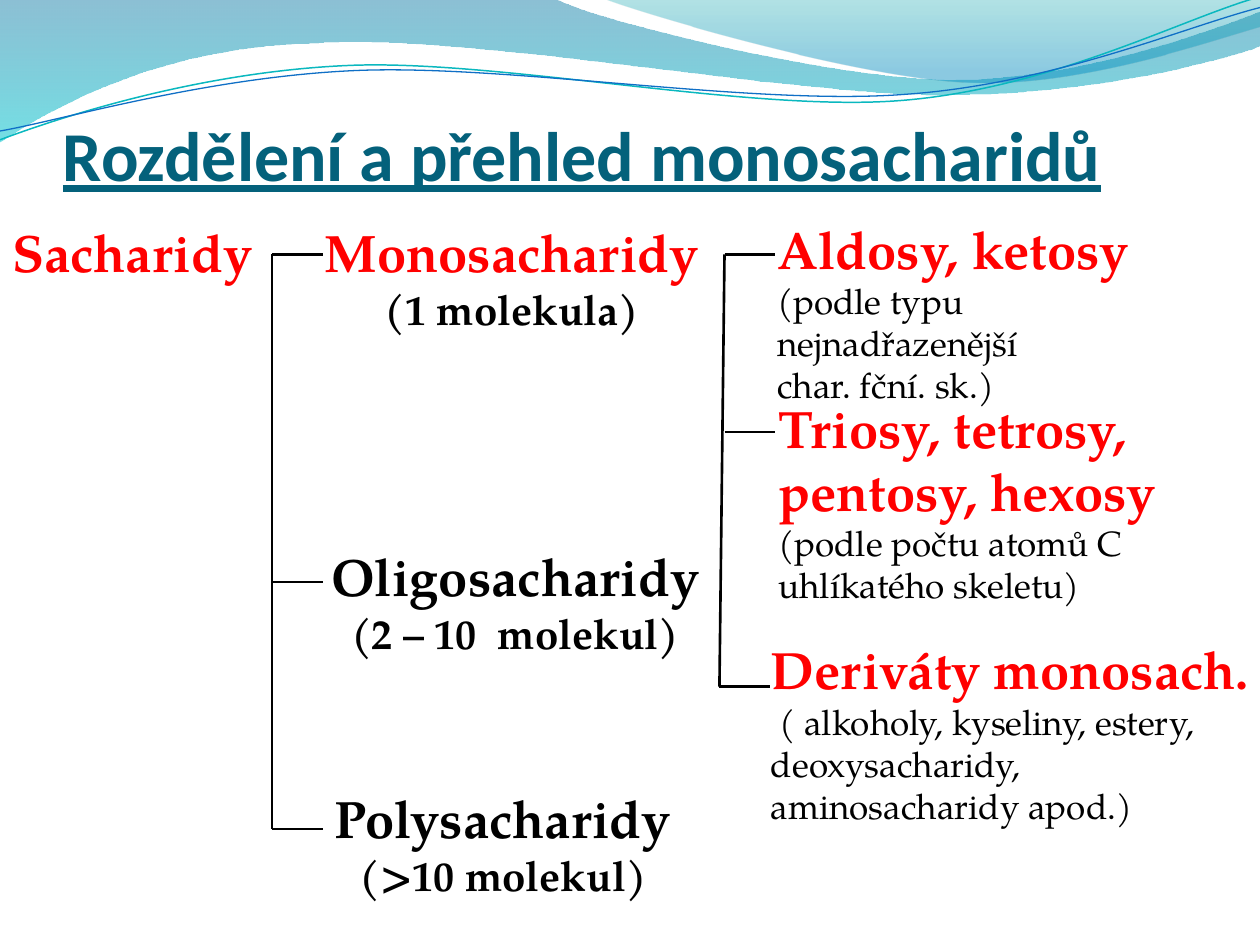
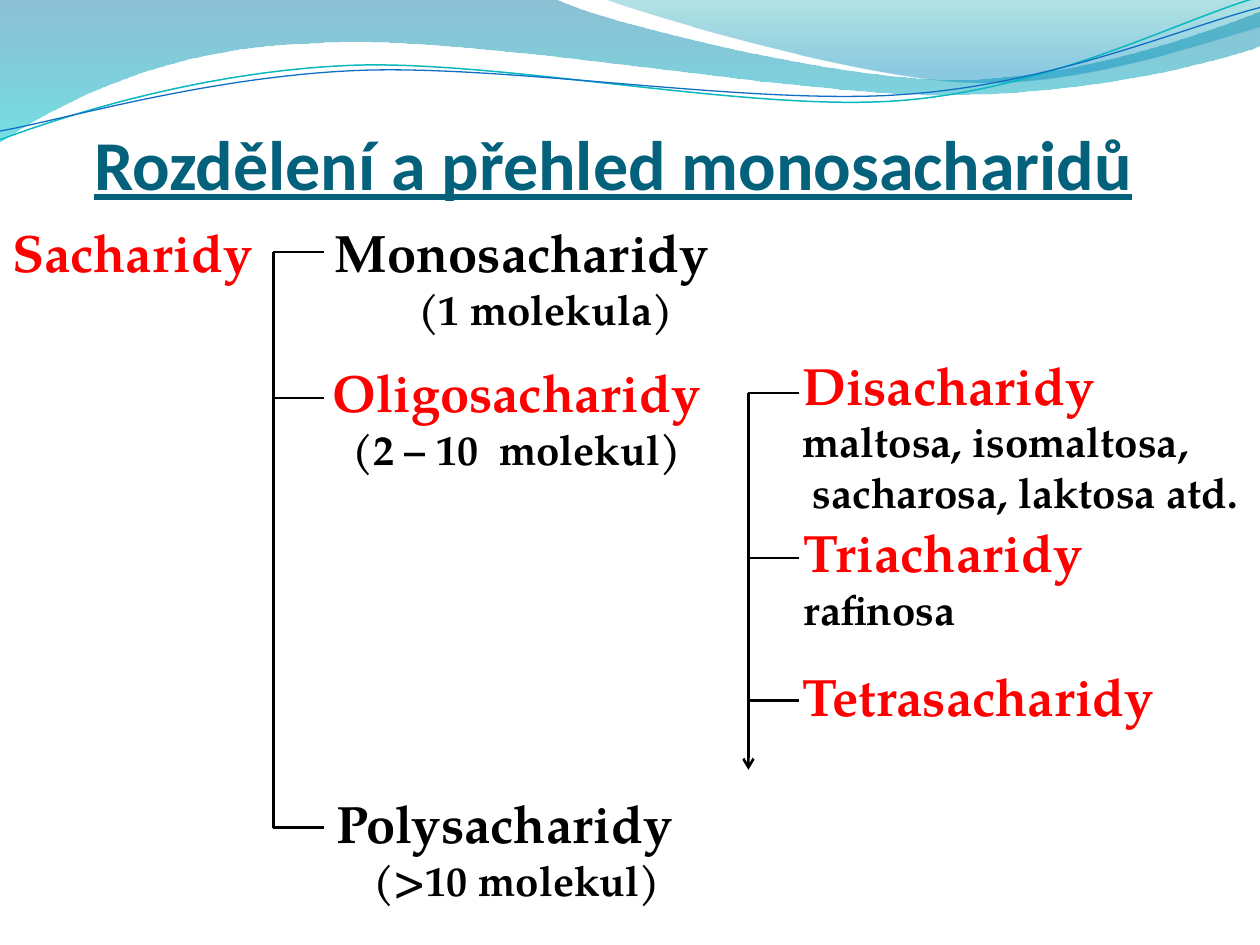
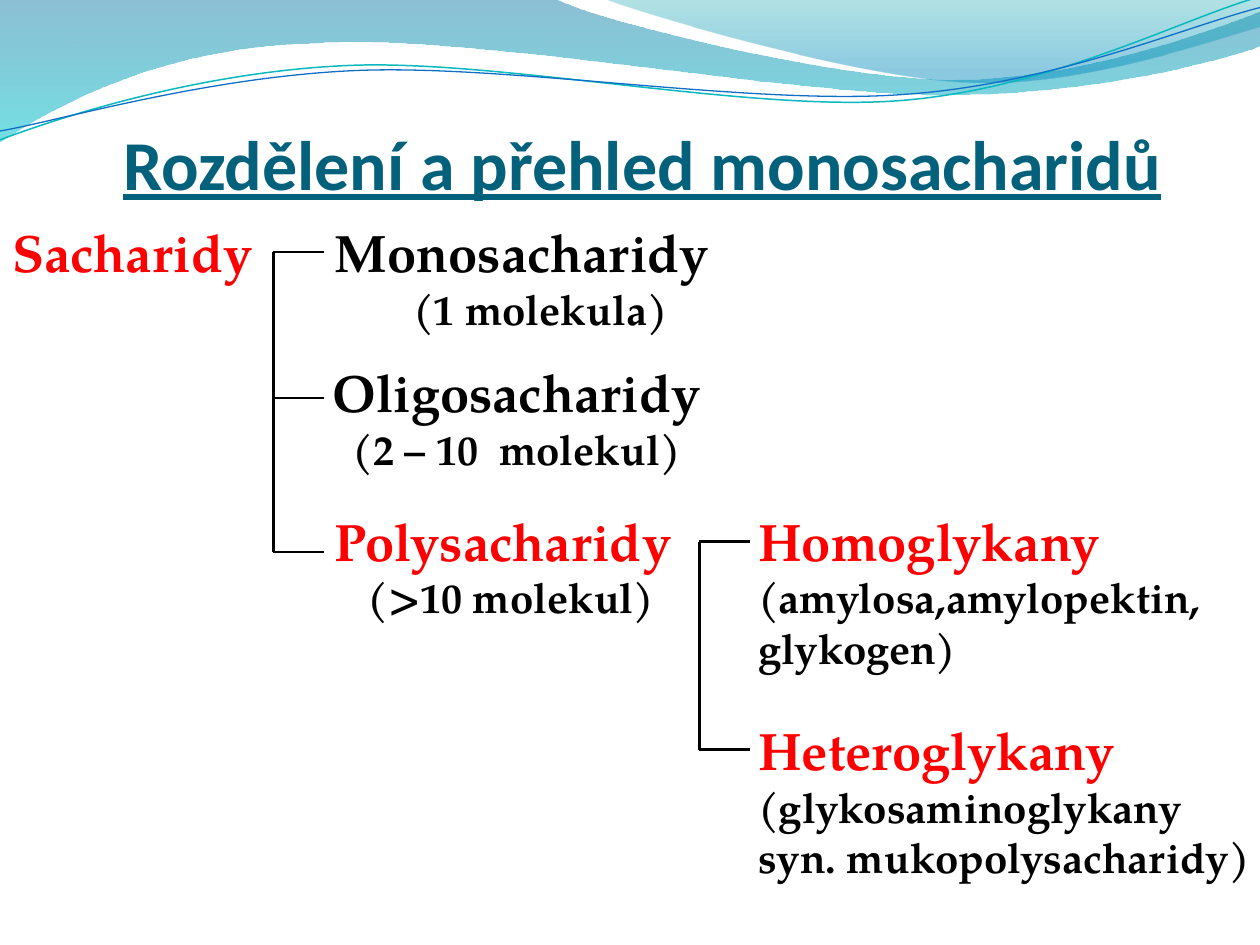
"""Build three slides that classify saccharides as bracket trees."""
from dataclasses import dataclass

from lxml import etree
from pptx import Presentation
from pptx.dml.color import RGBColor
from pptx.enum.shapes import MSO_CONNECTOR
from pptx.enum.text import MSO_ANCHOR, MSO_AUTO_SIZE, PP_ALIGN
from pptx.oxml.ns import qn
from pptx.util import Inches, Pt

STRAIGHT = MSO_CONNECTOR.STRAIGHT
LEFT, CENTER = PP_ALIGN.LEFT, PP_ALIGN.CENTER
TOP, BOTTOM = MSO_ANCHOR.TOP, MSO_ANCHOR.BOTTOM
GROW, FIXED = MSO_AUTO_SIZE.SHAPE_TO_FIT_TEXT, MSO_AUTO_SIZE.NONE


@dataclass(frozen=True)
class Theme:
    """Colours, fonts, sizes and shared measures."""
    title_color: str = "04617B"
    accent: str = "FF0000"
    ink: str = "000000"
    title_font: str = "Calibri"
    body_font: str = "TeX Gyre Pagella"
    title_size: int = 40
    head_size: int = 30
    note_size: int = 24
    small_size: int = 20
    line_width: float = 1.5
    stub: float = 0.4


T = Theme()
WIDTH, HEIGHT = 10, 7.5
TITLE = "Rozdělení a přehled monosacharidů"
MONO = ("Monosacharidy", "(1 molekula)")
OLIGO = ("Oligosacharidy", "(2 – 10  molekul)")
POLY = ("Polysacharidy", "(>10 molekul)")
ROOT = dict(box=(0, 1.7, 2.14, 0.61), heads=["Sacharidy"], accent=True)

WAVES = [
    dict(start=(0, 0), fill=[(0, "0074A1", 45), (1, "00C6CF", 55)], segments=[
        (4.4, -0.01), (4.76, 0.17, 6.64, 0.63, 7.58, 0.63),
        (8.53, 0.63, 9.58, 0.26, 10, 0.09), (10.01, 0.36),
        (9.83, 0.44, 8.7, 0.76, 7.46, 0.75), (6.22, 0.75, 3.82, 0.28, 2.57, 0.34),
        (1.29, 0.36, 0.46, 0.83, -0.01, 1.13), (0, 0)]),
    dict(start=(4.79, -0.01), fill=[(0, "00A1A9", 30), (0.8, "008BBF", 45)], segments=[
        (5.09, 0.11, 6.82, 0.62, 7.69, 0.65), (8.56, 0.69, 9.61, 0.32, 10, 0.21),
        (10, 0), (4.79, -0.01)]),
    dict(start=(0, 1.11), line=("0AB8BF", 0.85), segments=[
        (0.48, 0.93, 1.58, 0.57, 2.77, 0.52), (3.95, 0.47, 5.93, 0.89, 7.13, 0.8),
        (8.33, 0.71, 9.38, 0.15, 9.98, -0.02)]),
    dict(start=(0, 1.04), line=("0F6FC6", 0.75), segments=[
        (0.47, 0.96, 1.64, 0.61, 2.83, 0.56), (4.03, 0.51, 5.97, 0.84, 7.17, 0.75),
        (8.36, 0.67, 9.41, 0.21, 10, 0.06)]),
]

SLIDES = [
    dict(
        title_box=(0.5, 0.77, 9, 0.78),
        brackets=[dict(x=2.16, ys=(2.02, 4.62, 6.58)),
                  dict(x=5.75, ys=(2.02, 3.43, 5.45), foot=5.71)],
        groups=[dict(box=(2.48, 1.7, 3.27, 1.01), heads=MONO[:1], notes=MONO[1:],
                     accent=True, align=CENTER),
                dict(box=(2.53, 4.27, 3.21, 1.01), heads=OLIGO[:1], notes=OLIGO[1:],
                     align=CENTER),
                dict(box=(2.56, 6.19, 2.97, 1.55), heads=POLY[:1], notes=POLY[1:],
                     align=CENTER)],
        leaves=[dict(box=(6.07, 1.67, 3.56, 1.28), heads=["Aldosy, ketosy"], wrap=True,
                     notes=["(podle typu nejnadřazenější", "char. fční. sk.)"]),
                dict(box=(6.08, 3.09, 3.33, 1.78),
                     heads=["Triosy, tetrosy,", "pentosy, hexosy"],
                     notes=["(podle počtu atomů C", "uhlíkatého skeletu)"]),
                dict(box=(6.02, 5.01, 4.18, 1.65), heads=["Deriváty monosach."],
                     notes=[" ( alkoholy, kyseliny, estery,", "deoxysacharidy,",
                            "aminosacharidy apod.)"])],
        leaf_style=dict(note_size=T.small_size, note_bold=False)),
    dict(
        title_box=(0.75, 0.68, 9, 0.94),
        brackets=[dict(x=2.17, ys=(2, 3.16, 6.57)),
                  dict(x=5.94, ys=(3.12, 4.43, 5.56), arrow_to=6.11)],
        groups=[dict(box=(2.56, 1.7, 3.54, 1.04), heads=MONO[:1], notes=MONO[1:],
                     align=CENTER, wrap=True),
                dict(box=(2.54, 2.81, 3.21, 1.01), heads=OLIGO[:1], notes=OLIGO[1:],
                     accent=True, align=CENTER),
                dict(box=(2.57, 6.23, 3.06, 1.01), heads=POLY[:1], notes=POLY[1:],
                     align=CENTER, wrap=True)],
        leaves=[dict(box=(6.27, 2.75, 3.86, 1.41), heads=["Disacharidy"],
                     notes=["maltosa, isomaltosa,", " sacharosa, laktosa atd."]),
                dict(box=(6.28, 4.08, 2.48, 1.01), heads=["Triacharidy"],
                     notes=["rafinosa"]),
                dict(box=(6.27, 5.22, 3.13, 0.61), heads=["Tetrasacharidy"])],
        leaf_style={}),
    dict(
        title_box=(0.98, 0.77, 8.52, 0.85),
        brackets=[dict(x=2.17, ys=(2, 3.16, 4.38)), dict(x=5.55, ys=(4.3, 5.95))],
        groups=[dict(box=(2.56, 1.7, 3.46, 1.01), heads=MONO[:1], notes=MONO[1:],
                     align=CENTER, wrap=True),
                dict(box=(2.54, 2.81, 3.21, 1.01), heads=OLIGO[:1], notes=OLIGO[1:],
                     align=CENTER),
                dict(box=(2.56, 3.99, 2.99, 1.01), heads=POLY[:1], notes=POLY[1:],
                     accent=True, align=CENTER, wrap=True)],
        leaves=[dict(box=(5.92, 3.99, 3.85, 1.41), heads=["Homoglykany"],
                     notes=["(amylosa,amylopektin,", "glykogen)"]),
                dict(box=(5.92, 5.65, 4.18, 1.41), heads=["Heteroglykany"],
                     notes=["(glykosaminoglykany", "syn. mukopolysacharidy)"])],
        leaf_style={}),
]


def rgb(value):
    return RGBColor.from_string(value)


def add_frame(s, box, anchor=TOP, wrap=False, auto_size=GROW):
    tf = s.shapes.add_textbox(*map(Inches, box)).text_frame
    tf.word_wrap, tf.auto_size, tf.vertical_anchor = wrap, auto_size, anchor
    return tf


def write(tf, text, first=False, size=T.head_size, color=T.ink, font=T.body_font,
          bold=True, underline=False, align=LEFT):
    p = tf.paragraphs[0] if first else tf.add_paragraph()
    p.alignment = align
    r = p.add_run()
    r.text = text
    f = r.font
    f.size, f.name, f.bold, f.underline = Pt(size), font, bold, underline
    f.color.rgb = rgb(color)


def add_title(s, box):
    tf = add_frame(s, box, anchor=BOTTOM, wrap=True, auto_size=FIXED)
    tf.margin_left = tf.margin_right = tf.margin_bottom = 0
    write(tf, TITLE, first=True, size=T.title_size, color=T.title_color,
          font=T.title_font, underline=True)


def add_node(s, box, heads, notes=(), accent=False, align=LEFT, wrap=False,
             note_size=T.note_size, note_bold=True):
    tf = add_frame(s, box, wrap=wrap)
    for i, head in enumerate(heads):
        write(tf, head, first=i == 0, color=T.accent if accent else T.ink)
    for note in notes:
        write(tf, note, size=note_size, bold=note_bold, align=align)


def add_line(s, x1, y1, x2, y2, arrow=False):
    c = s.shapes.add_connector(STRAIGHT, *map(Inches, (x1, y1, x2, y2)))
    c.line.color.rgb = rgb(T.ink)
    c.line.width = Pt(T.line_width)
    if arrow:
        etree.SubElement(c.line._get_or_add_ln(), qn("a:tailEnd"), type="arrow")
    etree.SubElement(c._element.spPr, qn("a:effectLst"))


def add_bracket(s, x, ys, foot=None, arrow_to=None):
    foot = foot or x
    add_line(s, x, ys[0], foot, arrow_to or ys[-1], arrow=arrow_to is not None)
    for y in ys:
        left = foot if y == ys[-1] else x
        add_line(s, left, y, left + T.stub, y)


def bend(sp, segments):
    """Turn each run of three line steps that stands for a curve into a Bezier."""
    steps = iter(list(sp._element.iter(qn("a:lnTo"))))
    for segment in segments:
        first = next(steps)
        if len(segment) == 6:
            first.tag = qn("a:cubicBezTo")
            for _ in range(2):
                step = next(steps)
                first.append(step[0])
                step.getparent().remove(step)


def add_wave(s, start, segments, fill=None, line=None):
    points = [tuple(map(Inches, seg[i:i + 2]))
              for seg in segments for i in range(0, len(seg), 2)]
    builder = s.shapes.build_freeform(*map(Inches, start), scale=1)
    builder.add_line_segments(points, close=fill is not None)
    sp = builder.convert_to_shape()
    bend(sp, segments)
    sp.shadow.inherit = False
    if line:
        sp.fill.background()
        sp.line.color.rgb, sp.line.width = rgb(line[0]), Pt(line[1])
        return sp
    sp.line.fill.background()
    sp.fill.gradient()
    sp.fill.gradient_angle = 270
    for stop, (position, color, _) in zip(sp.fill.gradient_stops, fill):
        stop.position, stop.color.rgb = position, rgb(color)
    colors = sp._element.spPr.iter(qn("a:srgbClr"))
    for node, (_, _, opacity) in zip(colors, fill):
        etree.SubElement(node, qn("a:alpha"), val=str(opacity * 1000))
    return sp


def main():
    prs = Presentation()
    prs.slide_width, prs.slide_height = Inches(WIDTH), Inches(HEIGHT)
    blank = prs.slide_layouts[6]
    slides = [prs.slides.add_slide(blank) for _ in SLIDES]
    for wave in WAVES:
        blank.shapes._spTree.append(add_wave(slides[0], **wave)._element)
    for s, content in zip(slides, SLIDES):
        add_title(s, content["title_box"])
        for bracket in content["brackets"]:
            add_bracket(s, **bracket)
        for node in [ROOT, *content["groups"]]:
            add_node(s, **node)
        for leaf in content["leaves"]:
            add_node(s, accent=True, **leaf, **content["leaf_style"])
    prs.save("out.pptx")


if __name__ == "__main__":
    main()
